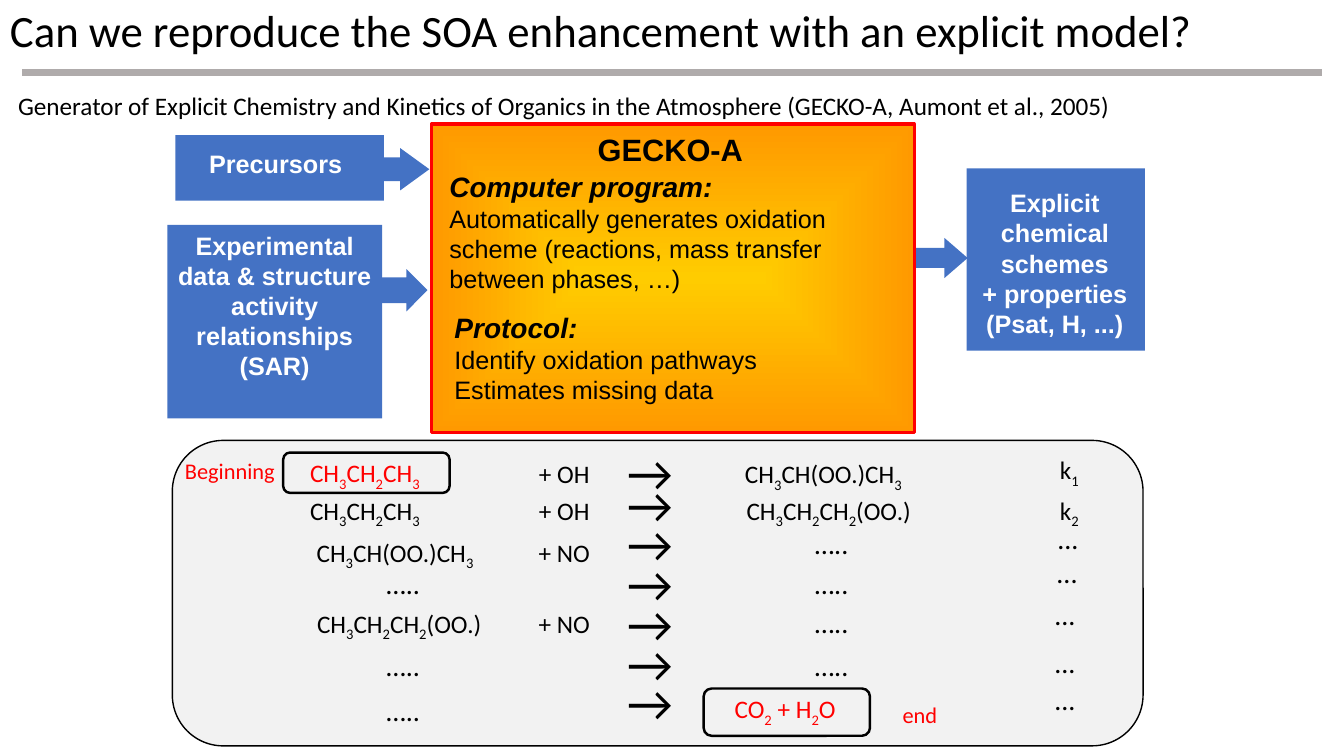
from dataclasses import dataclass
from typing import NamedTuple

import pptx
import pptx.dml.color
import pptx.enum.shapes
import pptx.enum.text
import pptx.oxml
import pptx.oxml.ns
import pptx.util

Pt = pptx.util.Pt
Align = pptx.enum.text.PP_ALIGN
Anchor = pptx.enum.text.MSO_ANCHOR
AutoSize = pptx.enum.text.MSO_AUTO_SIZE
Preset = pptx.enum.shapes.MSO_SHAPE

BLACK, WHITE, RED, BLUE = "000000", "FFFFFF", "FF0000", "4472C4"
PROPANE = "CH_3CH_2CH_3"
BRANCHED = "CH_3CH(OO.)CH_3"
LINEAR = "CH_3CH_2CH_2(OO.)"
MORE = "….."


class Box(NamedTuple):
    left: float
    top: float
    width: float
    height: float


@dataclass
class Block:
    preset: Preset
    box: Box
    fill: str | None = None
    line: str | None = None
    line_width: float = 1
    adjustments: tuple[float, ...] = ()


@dataclass
class Entry:
    """One term of the reaction scheme; an underscore lowers the next character."""
    text: str
    left: float
    top: float
    width: float
    size: float = 18
    color: str = BLACK


def rgb(color: str) -> pptx.dml.color.RGBColor:
    return pptx.dml.color.RGBColor.from_string(color)


def points(box: Box) -> list[pptx.util.Length]:
    return [Pt(length) for length in box]


def add_block(slide, block: Block):
    shape = slide.shapes.add_shape(block.preset, *points(block.box))
    shape.shadow.inherit = False
    for index, value in enumerate(block.adjustments):
        shape.adjustments[index] = value
    if block.fill:
        shape.fill.solid()
        shape.fill.fore_color.rgb = rgb(block.fill)
    else:
        shape.fill.background()
    if block.line:
        shape.line.color.rgb = rgb(block.line)
        shape.line.width = Pt(block.line_width)
    else:
        shape.line.fill.background()
    return shape


def add_run(paragraph, text: str, size: float, font: str, color: str,
            bold: bool, italic: bool, lowered: bool = False) -> None:
    run = paragraph.add_run()
    run.text = text
    run.font.size = Pt(size)
    run.font.name = font
    run.font.color.rgb = rgb(color)
    run.font.bold = bold
    run.font.italic = italic
    if lowered:
        run.font._element.set("baseline", "-25000")


def write_text(frame, text: str, *, size: float = 18, font: str = "Calibri",
               color: str = BLACK, bold: bool = False, align: Align = Align.LEFT,
               anchor: Anchor = Anchor.TOP, wrap: bool = True, grow: bool = True,
               heading: str = "", line_spacing: float | None = None) -> None:
    """Write one paragraph per line, under an optional bold italic heading."""
    frame.word_wrap = wrap
    frame.auto_size = AutoSize.SHAPE_TO_FIT_TEXT if grow else AutoSize.NONE
    frame.vertical_anchor = anchor
    lines = ([heading] if heading else []) + text.split("\n")
    for index, line in enumerate(lines):
        paragraph = frame.add_paragraph() if index else frame.paragraphs[0]
        paragraph.alignment = align
        paragraph.line_spacing = line_spacing
        if heading and index == 0:
            add_run(paragraph, line, 20, font, color, True, True)
            continue
        first, *lowered_parts = line.split("_")
        add_run(paragraph, first, size, font, color, bold, False)
        for part in lowered_parts:
            add_run(paragraph, part[0], size, font, color, bold, False, lowered=True)
            if part[1:]:
                add_run(paragraph, part[1:], size, font, color, bold, False)


def add_text(slide, text: str, box: Box, **text_format) -> None:
    write_text(slide.shapes.add_textbox(*points(box)).text_frame, text, **text_format)


def add_entry(slide, entry: Entry, wrap: bool = False) -> None:
    box = Box(entry.left, entry.top, entry.width, 1.22 * entry.size + 7.2)
    add_text(slide, entry.text, box, size=entry.size, color=entry.color,
             align=Align.CENTER, wrap=wrap)


def set_center_gradient(shape, inner: str, outer: str) -> None:
    shape.fill.gradient()
    for stop, color, position in zip(shape.fill.gradient_stops, (inner, outer), (0, 1)):
        stop.color.rgb = rgb(color)
        stop.position = position
    gradient = shape._element.spPr.find(pptx.oxml.ns.qn("a:gradFill"))
    gradient.remove(gradient.find(pptx.oxml.ns.qn("a:lin")))
    gradient.append(pptx.oxml.parse_xml(
        f'<a:path {pptx.oxml.ns.nsdecls("a")} path="shape">'
        '<a:fillToRect l="50000" t="50000" r="50000" b="50000"/></a:path>'))


def add_header(slide) -> None:
    rule = slide.shapes.add_connector(
        pptx.enum.shapes.MSO_CONNECTOR.STRAIGHT, Pt(15.8), Pt(51.8), Pt(944.6), Pt(51.8))
    rule.line.color.rgb = rgb("AFABAB")
    rule.line.width = Pt(4.5)
    rule._element.spPr.append(
        pptx.oxml.parse_xml(f'<a:effectLst {pptx.oxml.ns.nsdecls("a")}/>'))
    add_text(slide, "Can we reproduce the SOA enhancement with an explicit model?",
             Box(0, 1.4, 960, 44.6), size=32, anchor=Anchor.MIDDLE, grow=False,
             line_spacing=0.9)
    add_text(slide, "Generator of Explicit Chemistry and Kinetics of Organics in the "
             "Atmosphere (GECKO-A, Aumont et al., 2005)", Box(5.8, 61.2, 931.7, 28.8))


def add_flow(slide) -> None:
    label = dict(font="Arial", color=WHITE, bold=True, align=Align.CENTER)
    # Output and precursor arrows lie under the program box
    for box, adjustments in ((Box(650.9, 169.9, 40.3, 28.8), (0.496, 0.578)),
                             (Box(266.4, 105.8, 40.3, 30.2), (0.558, 0.689)),
                             (Box(256.3, 192.2, 49, 30.2), (0.608, 0.495))):
        add_block(slide, Block(Preset.RIGHT_ARROW, box, BLUE, adjustments=adjustments))
    # Program box
    program = add_block(slide, Block(Preset.RECTANGLE, Box(308.2, 88.6, 344.9, 220.3),
                                     line=RED, line_width=2.25))
    set_center_gradient(program, "FFCC00", "FF9900")
    add_text(slide, "GECKO-A", Box(341.3, 90, 275, 33.8), size=22, font="Arial",
             bold=True, align=Align.CENTER)
    add_text(slide, "Automatically generates oxidation scheme (reactions, mass transfer "
             "between phases, …)", Box(313.9, 117.4, 340.6, 97.2), font="Arial",
             heading="Computer program:")
    add_text(slide, "Identify oxidation pathways\nEstimates missing data",
             Box(317.5, 218.2, 323.3, 74.9), font="Arial", heading="Protocol:")
    # Inputs and output
    add_block(slide, Block(Preset.RECTANGLE, Box(125.3, 96.5, 149, 46.8), BLUE))
    add_text(slide, "Precursors", Box(119.5, 102.2, 154.8, 28.8), **label)
    add_block(slide, Block(Preset.RECTANGLE, Box(690.5, 120.2, 127.4, 130.3), BLUE))
    add_text(slide, "Explicit chemical schemes\n+ properties\n(Psat, H, ...)",
             Box(689.8, 130.3, 127.4, 116.6), **label)
    data = add_block(slide, Block(Preset.RECTANGLE, Box(119.5, 160.6, 153.4, 138.2), BLUE))
    write_text(data.text_frame, "Experimental data & structure activity relationships (SAR)",
               grow=False, **label)


def add_scheme(slide) -> None:
    add_block(slide, Block(Preset.ROUNDED_RECTANGLE, Box(123.1, 314.6, 693.4, 218.2),
                           "F2F2F2", BLACK))
    entries = [
        # Reactants
        Entry(PROPANE, 212.4, 323.3, 96.5, color=RED),
        Entry(PROPANE, 212.4, 349.9, 96.5),
        Entry(BRANCHED, 217.4, 380.2, 129.6),
        Entry(LINEAR, 217.4, 430.6, 135.4),
        # Products
        Entry(BRANCHED, 523.4, 324, 129.6),
        Entry(LINEAR, 524.2, 349.9, 135.4),
        Entry("CO_2 + H_2O", 516.2, 491.8, 89.3, color=RED),
        # Rate constants
        Entry("k_1", 749.5, 321.1, 28.8),
        Entry("k_2", 749.5, 349.9, 28.8),
        # Start and finish
        Entry("Beginning", 124.6, 323.3, 79.2, 16, RED),
        Entry("end", 637.2, 497.5, 39.6, 16, RED),
    ]
    entries += [Entry(partner, 377.3, top, 51.5) for partner, top in
                (("+ OH", 324), ("+ OH", 349.9), ("+ NO", 380.2), ("+ NO", 430.6))]
    entries += [Entry(MORE, 268.6, top, 38.9, 20) for top in (401, 459.4, 491.8)]
    entries += [Entry(MORE, 574.6, top, 38.9, 20) for top in (372.2, 401, 429.1, 459.4)]
    entries += [Entry("...", left, top, 29.5, 20) for left, top in
                ((748.1, 368.6), (747.4, 393.1), (745.9, 423.4), (745.9, 457.2),
                 (745.9, 483.8))]
    for entry in entries:
        add_entry(slide, entry)
    # Reaction arrows
    for top in [311.8] + [334.1 + 28.4 * row for row in range(6)]:
        add_entry(slide, Entry("→", 437, top, 54.7, 36), wrap=True)
    # Frames around the first reactant and the final products
    for box in (Box(202.3, 323.3, 118.8, 28.8), Box(502.6, 491.8, 118.8, 33.8)):
        add_block(slide, Block(Preset.ROUNDED_RECTANGLE, box, line=BLACK,
                               line_width=1.75, adjustments=(0.167,)))


def main() -> None:
    presentation = pptx.Presentation()
    presentation.slide_width, presentation.slide_height = Pt(960), Pt(540)
    slide = presentation.slides.add_slide(presentation.slide_layouts[6])
    add_header(slide)
    add_flow(slide)
    add_scheme(slide)
    presentation.save("out.pptx")


if __name__ == "__main__":
    main()
